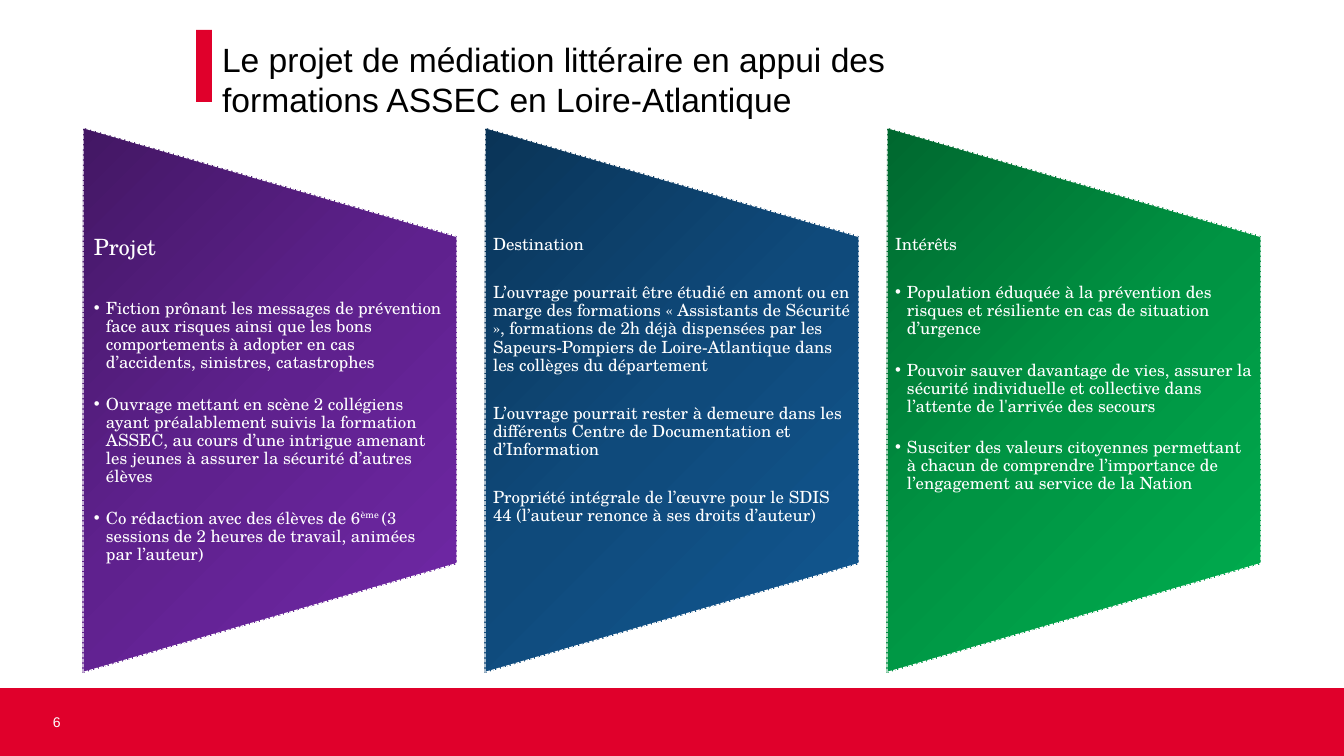
from dataclasses import dataclass

from pptx import Presentation
from pptx.dml.color import RGBColor
from pptx.enum.dml import MSO_LINE
from pptx.enum.shapes import MSO_SHAPE
from pptx.enum.text import MSO_ANCHOR, MSO_AUTO_SIZE, PP_ALIGN
from pptx.oxml import parse_xml
from pptx.oxml.ns import nsdecls
from pptx.util import Pt

PX = 914400 / 100.8


@dataclass(frozen=True)
class Theme:
    red: str = "E0002B"
    white: str = "FFFFFF"
    black: str = "000000"
    purple: tuple = ("431764", "5F218E", "7128A8")
    blue: tuple = ("0A3457", "0F4A7B", "125892")
    green: tuple = ("00682F", "009443", "00B050")
    sans: str = "Arial"
    serif: str = "TeX Gyre Schola"
    title: int = 24
    heading: int = 16
    text: int = 12
    number: int = 10


theme = Theme()


def px(*lengths):
    """Turn pixel lengths into EMU."""
    return [round(length * PX) for length in lengths]


def write(para, text, size=theme.text, font=theme.serif, color=theme.white,
          before=0, line=1.0, bullet=False):
    """Fill a paragraph; text between two ^ marks is superscript."""
    para.alignment = PP_ALIGN.LEFT
    para.line_spacing = line
    para.space_before = Pt(before)
    para.space_after = Pt(0)
    properties = para._p.get_or_add_pPr()
    indent, = px(12 if bullet else 0)
    properties.set("marL", str(indent))
    properties.set("indent", str(-indent))
    mark = '<a:buChar {} char="•"/>' if bullet else "<a:buNone {}/>"
    properties.append(parse_xml(mark.format(nsdecls("a"))))
    for position, part in enumerate(text.split("^")):
        span = para.add_run()
        span.text = part
        span.font.name = font
        span.font.size = Pt(size)
        span.font.bold = False
        span.font.color.rgb = RGBColor.from_string(color)
        if position % 2:
            span.font._element.set("baseline", "30000")


deck = Presentation()
deck.slide_width, deck.slide_height = px(1344, 756)
page = deck.slides.add_slide(deck.slide_layouts[4])
title, *bodies = page.placeholders
spare = bodies.pop()
spare._element.getparent().remove(spare._element)

# Red footer band and title accent
for area in [(0, 688, 1344, 68), (196, 30, 16, 72)]:
    bar = page.shapes.add_shape(MSO_SHAPE.RECTANGLE, *px(*area))
    bar.shadow.inherit = False
    bar.fill.solid()
    bar.fill.fore_color.rgb = RGBColor.from_string(theme.red)
    bar.line.fill.background()

number = page.shapes.add_textbox(*px(38, 704, 97, 36))
number.text_frame.word_wrap = True
number.text_frame.margin_left, = px(15)
number.text_frame.vertical_anchor = MSO_ANCHOR.MIDDLE
write(number.text_frame.paragraphs[0], "6", size=theme.number, font=theme.sans)

title.left, title.top, title.width, title.height = px(212, 34, 761, 92)
title.text_frame.auto_size = MSO_AUTO_SIZE.NONE
title.text_frame.vertical_anchor = MSO_ANCHOR.TOP
write(title.text_frame.paragraphs[0],
      "Le projet de médiation littéraire en appui des formations ASSEC en Loire-Atlantique",
      size=theme.title, font=theme.sans, color=theme.black)

# Colours, heading, heading size, inset, gap under heading, gap between items, bullets, items
columns = [
    (theme.purple, "Projet", theme.heading, 11, 28.5, 16.5, True, [
        "Fiction prônant les messages de prévention face aux risques ainsi que les bons "
        "comportements à adopter en cas d’accidents, sinistres, catastrophes",
        "Ouvrage mettant en scène 2 collégiens ayant préalablement suivis la formation "
        "ASSEC, au cours d’une intrigue amenant les jeunes à assurer la sécurité "
        "d’autres élèves",
        "Co rédaction avec des élèves de 6^ème ^(3 sessions de 2 heures de travail, "
        "animées par l’auteur)",
    ]),
    (theme.blue, "Destination", theme.text, 8, 21.4, 21.4, False, [
        "L’ouvrage pourrait être étudié en amont ou en marge des formations « Assistants "
        "de Sécurité », formations de 2h déjà dispensées par les Sapeurs-Pompiers de "
        "Loire-Atlantique dans les collèges du département",
        "L’ouvrage pourrait rester à demeure dans les différents Centre de Documentation "
        "et d’Information",
        "Propriété intégrale de l’œuvre pour le SDIS 44 (l’auteur renonce à ses droits "
        "d’auteur)",
    ]),
    (theme.green, "Intérêts", theme.text, 8, 21.4, 16.5, True, [
        "Population éduquée à la prévention des risques et résiliente en cas de "
        "situation d’urgence",
        "Pouvoir sauver davantage de vies, assurer la sécurité individuelle et "
        "collective dans l’attente de l'arrivée des secours",
        "Susciter des valeurs citoyennes permettant à chacun de comprendre l’importance "
        "de l’engagement au service de la Nation",
    ]),
]

PANEL_WIDTH, PANEL_HEIGHT, PANEL_PITCH = 374, 545, 402
PANEL_LEFT, PANEL_MIDDLE = 83, 400

for index, (body, column) in enumerate(zip(bodies, columns)):
    colors, heading, heading_size, inset, first_gap, item_gap, bullet, items = column
    left = PANEL_LEFT + index * PANEL_PITCH

    # The panel is turned a quarter, so its width and height swap
    panel = page.shapes.add_shape(
        MSO_SHAPE.FLOWCHART_MANUAL_OPERATION,
        *px(left + (PANEL_WIDTH - PANEL_HEIGHT) / 2, PANEL_MIDDLE - PANEL_WIDTH / 2,
            PANEL_HEIGHT, PANEL_WIDTH))
    panel.rotation = 270
    panel.shadow.inherit = False
    panel.line.color.rgb = RGBColor.from_string(theme.white)
    panel.line.width = Pt(0.9)
    panel.line.dash_style = MSO_LINE.SQUARE_DOT
    stops = "".join(f'<a:gs pos="{step * 50000}"><a:srgbClr val="{color}"/></a:gs>'
                    for step, color in enumerate(colors))
    panel._element.spPr.insert(2, parse_xml(
        f'<a:gradFill {nsdecls("a")} rotWithShape="0"><a:gsLst>{stops}</a:gsLst>'
        '<a:lin ang="2700000" scaled="0"/></a:gradFill>'))

    page.shapes._spTree.append(body._element)
    body.left, body.top, body.width, body.height = px(left, 236, PANEL_WIDTH, 327)
    frame = body.text_frame
    frame.auto_size = MSO_AUTO_SIZE.NONE
    frame.vertical_anchor = MSO_ANCHOR.TOP
    frame.margin_left, frame.margin_right = px(inset, inset)
    frame.margin_top = frame.margin_bottom = 0
    write(frame.paragraphs[0], heading, size=heading_size, line=0.9)
    for place, item in enumerate(items):
        write(frame.add_paragraph(), item, line=0.9, bullet=bullet,
              before=item_gap if place else first_gap)

deck.save("out.pptx")
